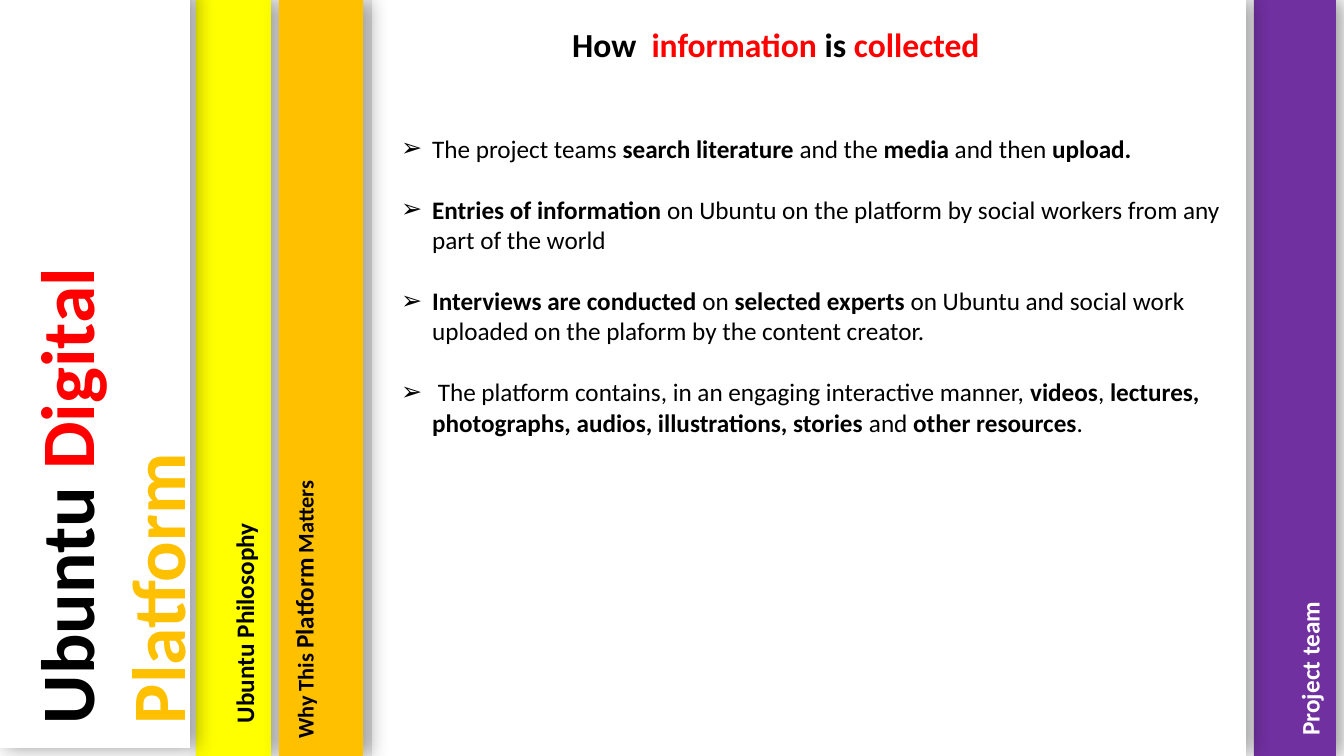
from lxml import etree
from pptx import Presentation
from pptx import util as u
from pptx.dml.color import RGBColor
from pptx.enum import shapes, text
from pptx.oxml import ns, parse_xml

PX = 914400 / 100.8
BLACK = RGBColor(0x00, 0x00, 0x00)
WHITE = RGBColor(0xFF, 0xFF, 0xFF)
RED = RGBColor(0xFF, 0x00, 0x00)
YELLOW = RGBColor(0xFF, 0xFF, 0x00)
AMBER = RGBColor(0xFF, 0xC0, 0x00)
PURPLE = RGBColor(0x70, 0x30, 0xA0)

SHADOW = (
    f'<a:effectLst {ns.nsdecls("a")}>'
    '<a:outerShdw blurRad="190500" dist="38100" dir="0" algn="l" rotWithShape="0">'
    '<a:srgbClr val="000000"><a:alpha val="40000"/></a:srgbClr>'
    '</a:outerShdw></a:effectLst>'
)


def px(*lengths):
    return [u.Emu(round(length * PX)) for length in lengths]


def add_text(paragraph, words, size=18, color=BLACK, bold=False):
    run = paragraph.add_run()
    run.text = words
    run.font.name = "Calibri"
    run.font.size = u.Pt(size)
    run.font.bold = bold
    run.font.color.rgb = color


prs = Presentation()
prs.slide_width, prs.slide_height = px(1344, 756)
slide = prs.slides.add_slide(prs.slide_layouts[1])

# Bands, from back to front
bands = [
    (1254, 0, 82, PURPLE),
    (372, 0, 874, WHITE),
    (196, 0, 75, YELLOW),
    (279, 0, 84, AMBER),
    (0, -8, 190, WHITE),
]
for left, top, width, color in bands:
    band = slide.shapes.add_shape(
        shapes.MSO_SHAPE.RECTANGLE, *px(left, top, width, 756))
    band.fill.solid()
    band.fill.fore_color.rgb = color
    band.line.fill.background()
    band.shadow.inherit = False
    properties = band.element.spPr
    properties.replace(properties.find(ns.qn("a:effectLst")), parse_xml(SHADOW))

# Labels that read upwards along the bands
labels = [
    ((1207, 623, 205, 40), [("Project team", 18, WHITE)]),
    ((80, 477, 475, 68), [("Why This ", 16, BLACK), ("Platform", 18, BLACK),
                          (" Matters", 16, BLACK)]),
    ((-133, 393, 488, 194), [("Ubuntu ", 54, BLACK), ("Digital ", 54, RED),
                             ("Platform", 54, AMBER)]),
    ((71, 540, 346, 40), [("Ubuntu Philosophy", 18, BLACK)]),
]
for place, parts in labels:
    label = slide.shapes.add_textbox(*px(*place))
    label.rotation = 270
    label.text_frame.word_wrap = True
    for words, size, color in parts:
        add_text(label.text_frame.paragraphs[0], words,
                 size=size, color=color, bold=True)

# Title and list lie in front of the white panel
title, body = slide.shapes.title, slide.placeholders[1]
for holder, place in ((title, (562, 19, 493, 50)), (body, (391, 128, 847, 346))):
    holder.left, holder.top, holder.width, holder.height = px(*place)
    holder.text_frame.word_wrap = True
    holder.text_frame.auto_size = text.MSO_AUTO_SIZE.NONE
    holder.text_frame.vertical_anchor = text.MSO_ANCHOR.TOP
    slide.shapes.element.append(holder.element)

heading = title.text_frame.paragraphs[0]
heading.alignment = text.PP_ALIGN.LEFT
for words, color in (("How  ", BLACK), ("information", RED),
                     (" is ", BLACK), ("collected", RED)):
    add_text(heading, words, size=24, color=color, bold=True)

# Each point alternates regular and bold parts, starting with regular
points = [
    ["The project teams ", "search literature ", "and the ", "media",
     " and then ", "upload."],
    ["", "Entries of information ",
     "on Ubuntu on the platform by social workers from any part of the world"],
    ["", "Interviews are conducted ", "on ", "selected experts ",
     "on Ubuntu and social work uploaded on the plaform by the content creator."],
    [" The platform contains, in an engaging interactive manner, ", "videos", ", ",
     "lectures, photographs, audios, illustrations, stories ", "and ",
     "other resources", "."],
]
indent = px(31)[0]
for number, parts in enumerate(points):
    frame = body.text_frame
    point = frame.add_paragraph() if number else frame.paragraphs[0]
    point.space_before = u.Pt(22 if number else 0)
    layout = point._p.get_or_add_pPr()
    layout.set("marL", str(indent))
    layout.set("indent", str(-indent))
    etree.SubElement(layout, ns.qn("a:buChar")).set("char", "➢")
    for position, words in enumerate(parts):
        if words:
            add_text(point, words, bold=position % 2 == 1)

prs.save("out.pptx")
